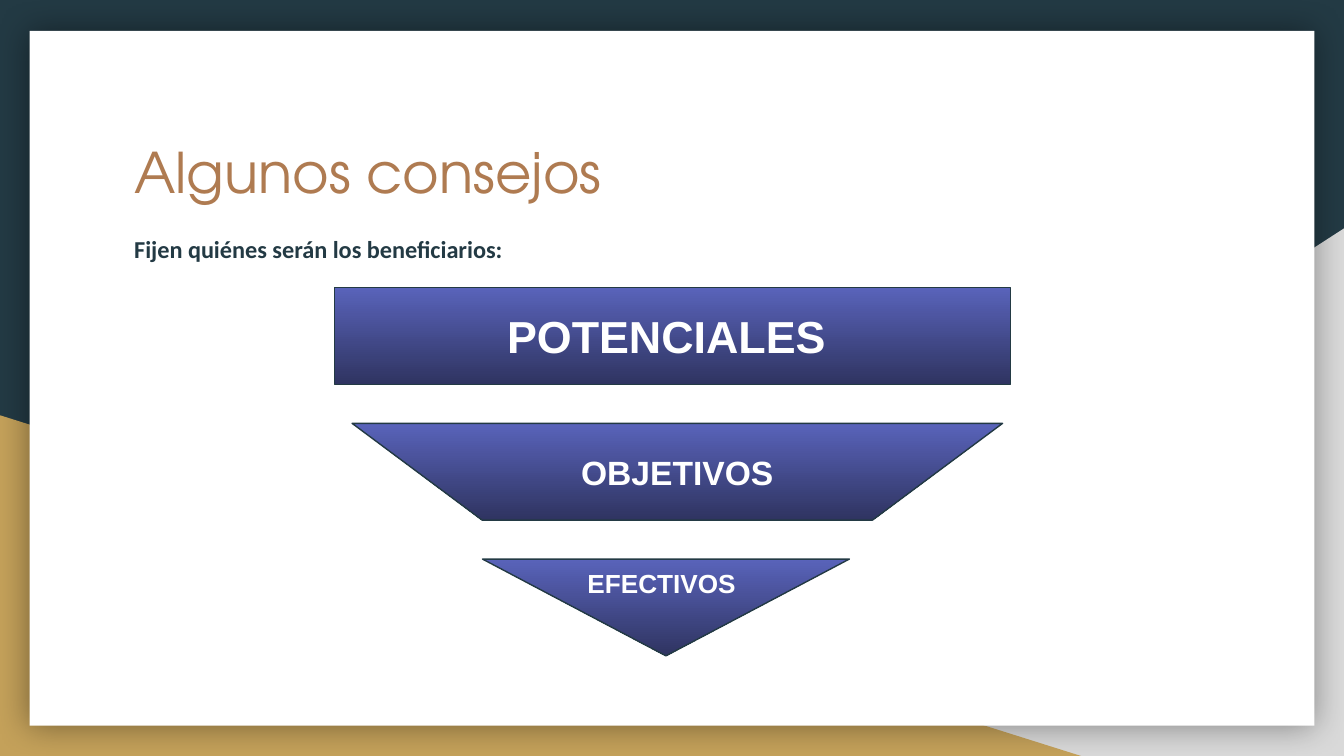
from dataclasses import dataclass

from lxml import etree
from pptx import Presentation
from pptx.dml import color
from pptx.enum import shapes, text
from pptx.oxml import ns
from pptx.util import Inches, Pt

Kind = shapes.MSO_SHAPE


@dataclass(frozen=True)
class Theme:
    navy: str = "233A44"
    gold: str = "C4A15A"
    grey: str = "D9D9D9"
    white: str = "FFFFFF"
    copper: str = "AF7B51"
    band_top: str = "5963BA"
    band_bottom: str = "2F3461"
    title_size: int = 30
    lead_size: int = 13
    title_font: str = "TeX Gyre Adventor"
    lead_font: str = "Calibri"
    band_font: str = "Arial"
    outline: float = 0.75


@dataclass(frozen=True)
class Backdrop:
    kind: Kind
    area: tuple[float, float, float, float]
    fill: str
    flipped: bool = False
    shadowed: bool = False


@dataclass(frozen=True)
class Band:
    kind: Kind
    left: float
    width: float
    label: str
    size: int
    align: text.PP_ALIGN = text.PP_ALIGN.CENTER


THEME = Theme()
PAGE_WIDTH = 10
PAGE_HEIGHT = PAGE_WIDTH * 9 / 16
BAND_TOP, BAND_HEIGHT, BAND_STEP = 2.14, 0.72, 1.01

BACKDROPS = [
    Backdrop(Kind.RIGHT_TRIANGLE, (3.92, 1.7, 6.08, 3.93), THEME.grey, flipped=True),
    Backdrop(Kind.RIGHT_TRIANGLE, (0, 3.09, 8.06, 2.54), THEME.gold),
    Backdrop(Kind.RECTANGLE, (0.22, 0.23, 9.56, 5.17), THEME.white, shadowed=True),
]

BANDS = [
    Band(Kind.RECTANGLE, 2.49, 5.03, "POTENCIALES ", 24),
    Band(Kind.FLOWCHART_MANUAL_OPERATION, 2.62, 4.84, "OBJETIVOS", 18),
    Band(Kind.FLOWCHART_MERGE, 3.59, 2.73, "EFECTIVOS", 14, text.PP_ALIGN.LEFT),
]


def rgb(value: str) -> color.RGBColor:
    return color.RGBColor.from_string(value)


def write(box, words: str, font: str, size: int, ink: str, bold: bool = False,
          align=text.PP_ALIGN.LEFT, anchor=text.MSO_ANCHOR.TOP, spacing: float = 1.0) -> None:
    frame = box.text_frame
    frame.text = words
    inset = Inches(0.1)
    frame_format = {
        "word_wrap": True,
        "auto_size": text.MSO_AUTO_SIZE.NONE,
        "vertical_anchor": anchor,
        "margin_left": inset,
        "margin_top": inset,
        "margin_right": inset,
        "margin_bottom": inset,
    }
    para = frame.paragraphs[0]
    span = para.runs[0]
    formats = [
        (frame, frame_format),
        (para, {"alignment": align, "line_spacing": spacing}),
        (span.font, {"name": font, "size": Pt(size), "bold": bold}),
    ]
    for target, values in formats:
        for name, value in values.items():
            setattr(target, name, value)
    span.font.color.rgb = rgb(ink)


def add_soft_shadow(box) -> None:
    effects = box.element.spPr.find(ns.qn("a:effectLst"))
    shadow = etree.SubElement(effects, ns.qn("a:outerShdw"),
                              blurRad=str(Pt(18)), dist="0", dir="0",
                              algn="ctr", rotWithShape="0")
    tint = etree.SubElement(shadow, ns.qn("a:srgbClr"), val="000000")
    etree.SubElement(tint, ns.qn("a:alpha"), val="40000")


def draw_backdrop(page, backdrop: Backdrop) -> None:
    box = page.shapes.add_shape(backdrop.kind, *map(Inches, backdrop.area))
    box.shadow.inherit = False
    box.fill.solid()
    box.fill.fore_color.rgb = rgb(backdrop.fill)
    box.line.fill.background()
    if backdrop.flipped:
        box.element.spPr.xfrm.set("flipH", "1")
    if backdrop.shadowed:
        add_soft_shadow(box)


def draw_band(page, band: Band, top: float) -> None:
    area = (band.left, top, band.width, BAND_HEIGHT)
    box = page.shapes.add_shape(band.kind, *map(Inches, area))
    box.shadow.inherit = False
    box.fill.gradient()
    box.fill.gradient_angle = 270
    stops = zip(box.fill.gradient_stops, (THEME.band_top, THEME.band_bottom))
    for position, (stop, tone) in enumerate(stops):
        stop.position = position
        stop.color.rgb = rgb(tone)
    box.line.color.rgb = rgb(THEME.navy)
    box.line.width = Pt(THEME.outline)
    write(box, band.label, THEME.band_font, band.size, THEME.white, bold=True,
          align=band.align, anchor=text.MSO_ANCHOR.MIDDLE)


def draw_title(page, words: str) -> None:
    title = page.shapes.title
    place = {"left": 0.9, "top": 0.92, "width": 8.21, "height": 1.04}
    for name, value in place.items():
        setattr(title, name, Inches(value))
    write(title, words, THEME.title_font, THEME.title_size, THEME.copper)
    page.shapes.element.append(title.element)


def draw_lead(page, words: str) -> None:
    box = page.shapes.add_textbox(*map(Inches, (0.9, 1.61, 8.21, 2.68)))
    write(box, words, THEME.lead_font, THEME.lead_size, THEME.navy,
          bold=True, spacing=1.15)


def main() -> None:
    deck = Presentation()
    deck.slide_width, deck.slide_height = Inches(PAGE_WIDTH), Inches(PAGE_HEIGHT)
    page = deck.slides.add_slide(deck.slide_layouts[5])
    page.background.fill.solid()
    page.background.fill.fore_color.rgb = rgb(THEME.navy)
    for backdrop in BACKDROPS:
        draw_backdrop(page, backdrop)
    draw_title(page, "Algunos consejos")
    draw_lead(page, "Fijen quiénes serán los beneficiarios:")
    for index, band in enumerate(BANDS):
        draw_band(page, band, BAND_TOP + index * BAND_STEP)
    deck.save("out.pptx")


if __name__ == "__main__":
    main()
